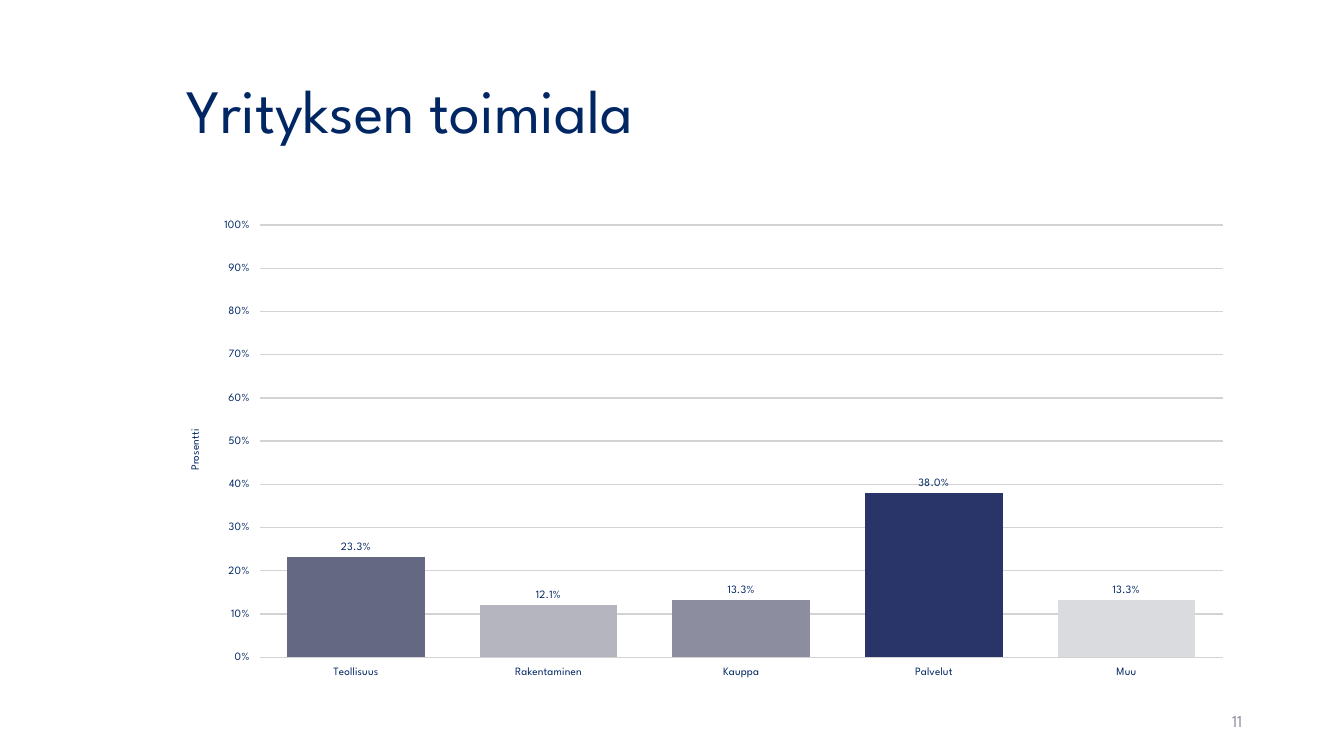
from lxml import etree
from pptx import Presentation
from pptx.chart.data import CategoryChartData
from pptx.dml.color import RGBColor
from pptx.enum.chart import XL_CHART_TYPE, XL_LABEL_POSITION, XL_TICK_MARK
from pptx.enum.text import MSO_ANCHOR, PP_ALIGN
from pptx.oxml import parse_xml
from pptx.oxml.ns import nsdecls, qn
from pptx.util import Inches, Pt

FONT = "League Spartan"
NAVY = RGBColor(0x00, 0x26, 0x63)
GREY = RGBColor(0x8C, 0x8E, 0x9F)
GRID = RGBColor(0xD3, 0xD3, 0xD3)

# Industry, share of companies, column colour
INDUSTRIES = [
    ("Teollisuus", 0.233, RGBColor(0x64, 0x68, 0x83)),
    ("Rakentaminen", 0.121, RGBColor(0xB4, 0xB5, 0xBF)),
    ("Kauppa", 0.133, GREY),
    ("Palvelut", 0.38, RGBColor(0x29, 0x35, 0x68)),
    ("Muu", 0.133, RGBColor(0xDA, 0xDB, 0xDF)),
]


def set_format(target, values):
    for name, value in values.items():
        setattr(target, name, value)


def style_font(font, size, color=NAVY):
    set_format(font, {"name": FONT, "size": Pt(size), "bold": False})
    font.color.rgb = color


def manual_layout(**values):
    layout = parse_xml(f"<c:layout {nsdecls('c')}><c:manualLayout/></c:layout>")
    for name, value in values.items():
        etree.SubElement(layout[0], qn(f"c:{name}")).set("val", str(value))
    return layout


def add_title(slide, text):
    title = slide.shapes.title
    set_format(title, {"left": Inches(1.75), "top": Inches(0.4),
                       "width": Inches(10.59), "height": Inches(1.45)})
    title.text_frame.text = text
    title.text_frame.vertical_anchor = MSO_ANCHOR.MIDDLE
    paragraph = title.text_frame.paragraphs[0]
    set_format(paragraph, {"alignment": PP_ALIGN.LEFT, "line_spacing": 0.9})
    style_font(paragraph.runs[0].font, 44)


def add_page_number(slide, text):
    box = slide.shapes.add_textbox(Inches(9.42), Inches(6.95), Inches(3), Inches(0.4))
    frame = box.text_frame
    set_format(frame, {"text": text, "word_wrap": True,
                       "vertical_anchor": MSO_ANCHOR.MIDDLE})
    paragraph = frame.paragraphs[0]
    set_format(paragraph, {"alignment": PP_ALIGN.RIGHT, "space_after": Pt(6)})
    style_font(paragraph.runs[0].font, 12, GREY)


def style_axes(chart):
    for axis in (chart.category_axis, chart.value_axis):
        style_font(axis.tick_labels.font, 8)
        axis.major_tick_mark = XL_TICK_MARK.OUTSIDE
        axis.format.line.fill.background()

    # Percent scale with gridlines
    value_axis = chart.value_axis
    set_format(value_axis, {"minimum_scale": 0, "maximum_scale": 1,
                            "major_unit": 0.1, "has_major_gridlines": True})
    set_format(value_axis.tick_labels, {"number_format": "0%",
                                        "number_format_is_linked": False})
    gridline = value_axis.major_gridlines.format.line
    gridline.color.rgb = GRID
    gridline.width = Pt(1)

    # Axis title
    title = value_axis.axis_title
    title.text_frame.text = "Prosentti"
    style_font(title.text_frame.paragraphs[0].runs[0].font, 8)
    title.text_frame._txBody.bodyPr.set("rot", "-5400000")
    for layout in title._element.findall(qn("c:layout")):
        title._element.remove(layout)
    title._element.find(qn("c:tx")).addnext(
        manual_layout(xMode="edge", yMode="edge", x=0.01, y=0.47))


def style_columns(plot):
    set_format(plot, {"gap_width": 40, "overlap": -2, "vary_by_categories": False})
    series = plot.series[0]
    for index, (_, _, color) in enumerate(INDUSTRIES):
        fill = series.points[index].format.fill
        fill.solid()
        fill.fore_color.rgb = color
    labels = series.data_labels
    set_format(labels, {"show_value": True, "number_format": "0.0%",
                        "number_format_is_linked": False,
                        "position": XL_LABEL_POSITION.OUTSIDE_END})
    style_font(labels.font, 8)


def add_industry_chart(slide):
    data = CategoryChartData()
    data.categories = [name for name, _, _ in INDUSTRIES]
    data.add_series("Series 1", [share for _, share, _ in INDUSTRIES])
    chart = slide.shapes.add_chart(
        XL_CHART_TYPE.COLUMN_CLUSTERED, Inches(1.75), Inches(2),
        Inches(10.59), Inches(4.76), data).chart
    set_format(chart, {"has_title": False, "has_legend": False})
    style_font(chart.font, 18)
    style_axes(chart)
    style_columns(chart.plots[0])

    # Fixed plot area
    plot_area = chart._chartSpace.chart.plotArea
    for layout in plot_area.findall(qn("c:layout")):
        plot_area.remove(layout)
    plot_area.insert(0, manual_layout(
        layoutTarget="inner", xMode="edge", yMode="edge",
        x=0.078, y=0.049, w=0.902, h=0.901))


def main():
    presentation = Presentation()
    set_format(presentation, {"slide_width": Inches(13.33),
                              "slide_height": Inches(7.5)})
    slide = presentation.slides.add_slide(presentation.slide_layouts[5])
    add_title(slide, "Yrityksen toimiala")
    add_page_number(slide, "11")
    add_industry_chart(slide)
    presentation.save("out.pptx")


if __name__ == "__main__":
    main()
